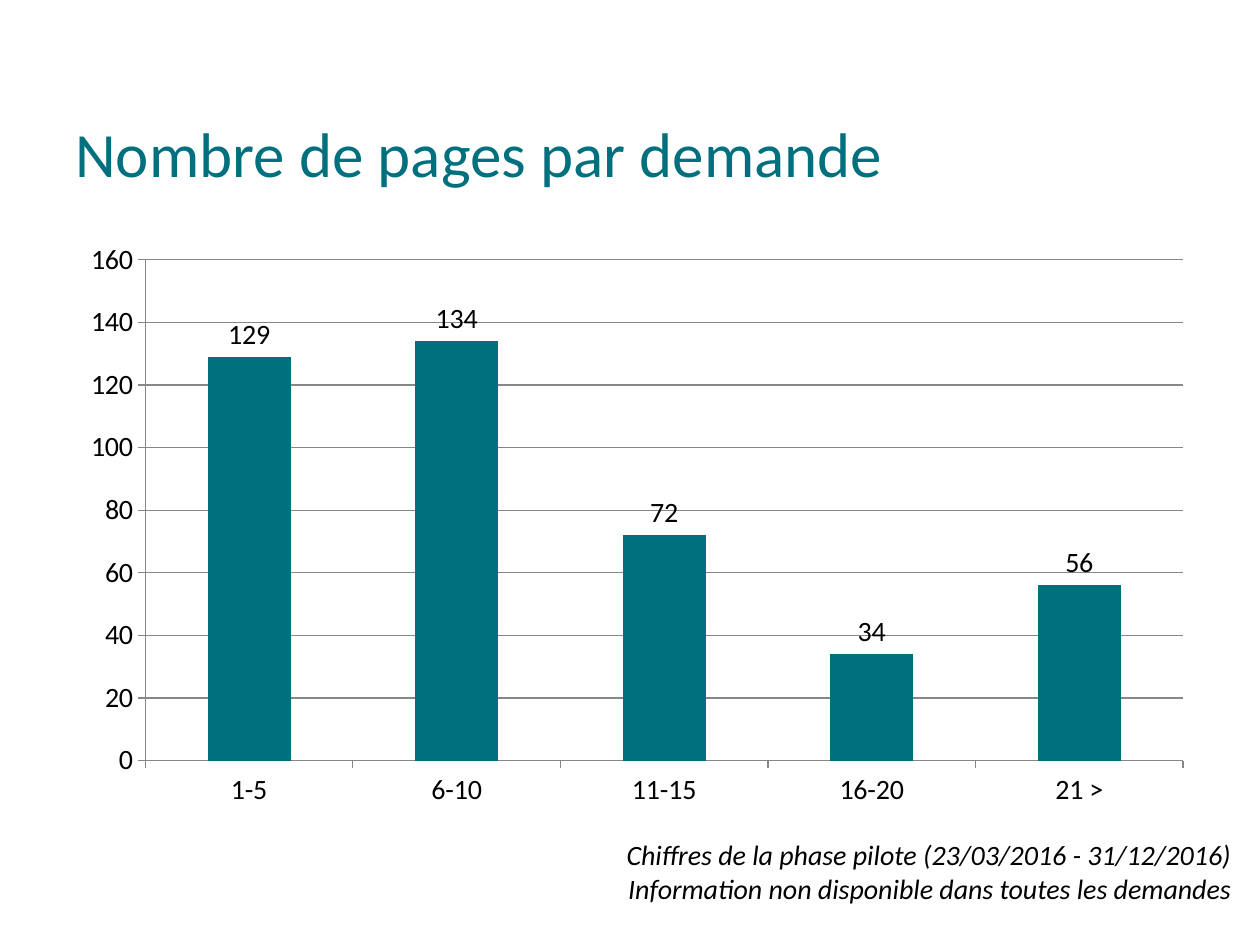
from pptx import Presentation
from pptx.chart.data import CategoryChartData
from pptx.dml.color import RGBColor
from pptx.enum.chart import XL_CHART_TYPE, XL_LABEL_POSITION, XL_TICK_MARK
from pptx.enum.text import MSO_ANCHOR, PP_ALIGN
from pptx.util import Pt

COLOURS = {"teal": "00707F", "black": "000000", "grey": "878787"}


class SlideBuilder:
    font_name = "Calibri"
    small_size = 16

    def __init__(self, slide):
        self.slide = slide

    def colour(self, name):
        return RGBColor.from_string(COLOURS[name])

    def style_font(self, font, size, colour, italic=False):
        font.name = self.font_name
        font.size = Pt(size)
        font.italic = italic
        font.bold = False
        font.color.rgb = self.colour(colour)

    def text(self, bounds, lines, size, colour, align=PP_ALIGN.LEFT,
             anchor=MSO_ANCHOR.TOP, italic=False):
        box = self.slide.shapes.add_textbox(*map(Pt, bounds))
        frame = box.text_frame
        frame.word_wrap = True
        frame.vertical_anchor = anchor
        for index, line in enumerate(lines):
            para = frame.add_paragraph() if index else frame.paragraphs[0]
            para.alignment = align
            span = para.add_run()
            span.text = line
            self.style_font(span.font, size, colour, italic)

    def style_axis(self, axis):
        axis.major_tick_mark = XL_TICK_MARK.OUTSIDE
        axis.minor_tick_mark = XL_TICK_MARK.NONE
        axis.format.line.color.rgb = self.colour("grey")
        axis.format.line.width = Pt(0.75)
        self.style_font(axis.tick_labels.font, self.small_size, "black")

    def column_chart(self, bounds, series_name, values, top, step):
        data = CategoryChartData()
        data.categories = list(values)
        data.add_series(series_name, list(values.values()))
        frame = self.slide.shapes.add_chart(
            XL_CHART_TYPE.COLUMN_CLUSTERED, *map(Pt, bounds), data)
        chart = frame.chart
        chart.has_legend = False
        chart.has_title = False
        self.style_font(chart.font, 18, "black")

        self.style_axis(chart.category_axis)
        value_axis = chart.value_axis
        self.style_axis(value_axis)
        value_axis.minimum_scale = 0
        value_axis.maximum_scale = top
        value_axis.major_unit = step
        value_axis.has_major_gridlines = True
        gridline = value_axis.major_gridlines.format.line
        gridline.color.rgb = self.colour("grey")
        gridline.width = Pt(0.75)

        plot = chart.plots[0]
        plot.gap_width = 150
        plot.vary_by_categories = False
        series = plot.series[0]
        series.format.fill.solid()
        series.format.fill.fore_color.rgb = self.colour("teal")
        labels = series.data_labels
        labels.show_value = True
        labels.position = XL_LABEL_POSITION.OUTSIDE_END
        self.style_font(labels.font, self.small_size, "black")


def main():
    deck = Presentation()
    deck.slide_width = Pt(720)
    deck.slide_height = Pt(540)
    page = SlideBuilder(deck.slides.add_slide(deck.slide_layouts[6]))
    page.text((36, 62.6, 648, 49), ["Nombre de pages par demande"],
              36, "teal", anchor=MSO_ANCHOR.MIDDLE)
    pages_per_request = {
        "1-5": 129, "6-10": 134, "11-15": 72, "16-20": 34, "21 >": 56}
    page.column_chart((39, 132, 650, 336), "Series 1",
                      pages_per_request, top=160, step=20)
    page.text((110, 475, 600.6, 46),
              ["Chiffres de la phase pilote (23/03/2016 - 31/12/2016)",
               "Information non disponible dans toutes les demandes"],
              16, "black", align=PP_ALIGN.RIGHT, italic=True)
    deck.save("out.pptx")


if __name__ == "__main__":
    main()
